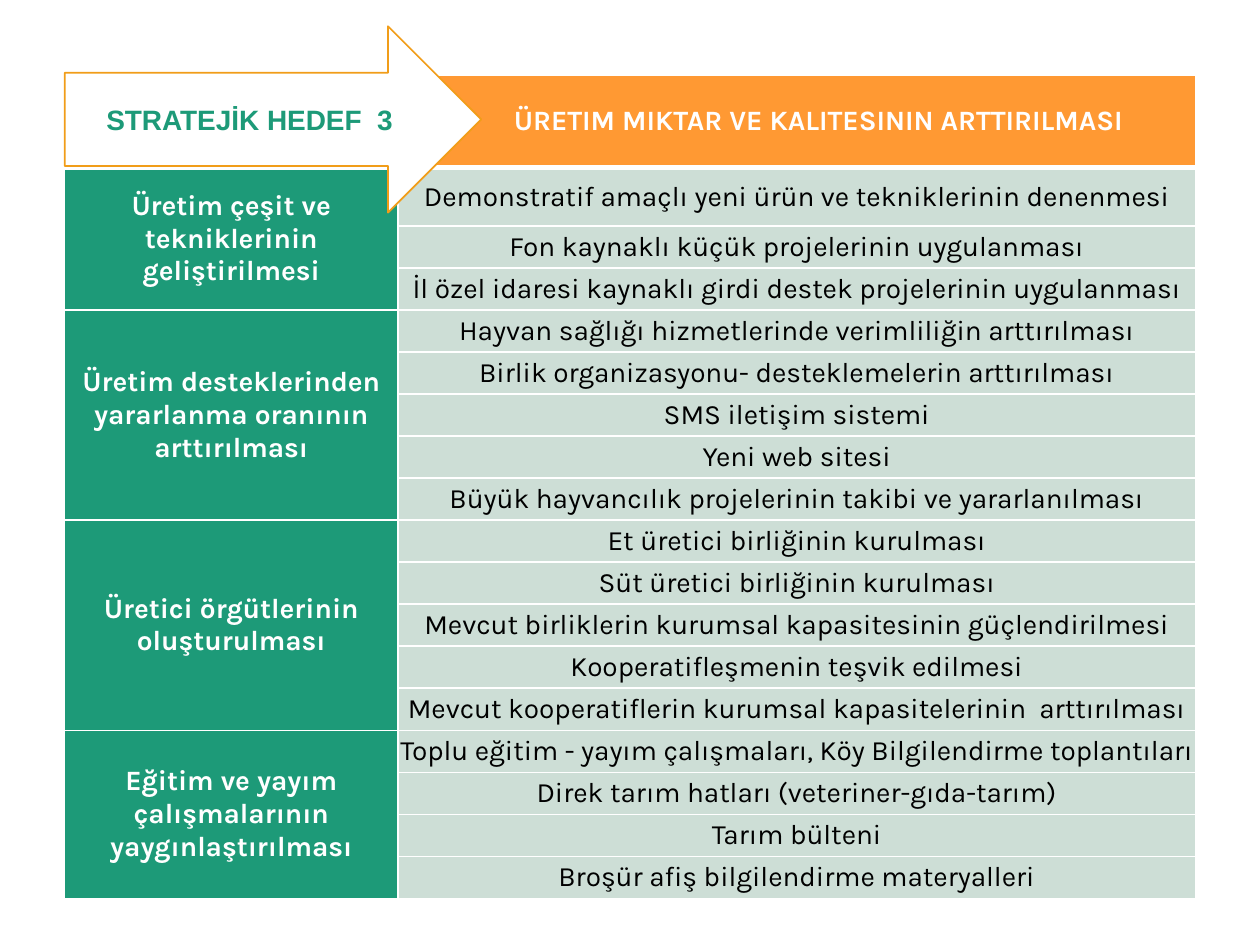
"""Build the slide that lists the activities of strategic goal 3."""

from typing import NamedTuple

from lxml.etree import SubElement
from pptx import Presentation
from pptx.dml.color import RGBColor
from pptx.enum.shapes import MSO_SHAPE
from pptx.enum.text import MSO_ANCHOR, PP_ALIGN
from pptx.oxml.ns import qn
from pptx.slide import Slide
from pptx.table import Table, _Cell
from pptx.text.text import TextFrame
from pptx.util import Pt

GREEN = RGBColor(0x1D, 0x9A, 0x78)
PALE_GREEN = RGBColor(0xCD, 0xDE, 0xD6)
ORANGE = RGBColor(0xFF, 0x99, 0x33)
AMBER = RGBColor(0xF1, 0x9D, 0x19)
WHITE = RGBColor(0xFF, 0xFF, 0xFF)
BLACK = RGBColor(0x00, 0x00, 0x00)

LEFT, TOP = Pt(37), Pt(43.2)
COLUMN_WIDTHS = (Pt(190.4), Pt(455.8))
HEADER_HEIGHT, FIRST_HEIGHT, ROW_HEIGHT = Pt(52.6), Pt(33.4), Pt(24.03)
HEADER_INDENT = Pt(25)
THIN, THICK = Pt(1), Pt(3)


class Objective(NamedTuple):
    title: str
    activities: tuple[str, ...]


HEADING = "ÜRETIM MIKTAR VE KALITESININ ARTTIRILMASI"
GOAL = "STRATEJİK HEDEF  3"
OBJECTIVES = (
    Objective("Üretim çeşit ve\ntekniklerinin\ngeliştirilmesi", (
        "Demonstratif amaçlı yeni ürün ve tekniklerinin denenmesi",
        "Fon kaynaklı küçük projelerinin uygulanması",
        "İl özel idaresi kaynaklı girdi destek projelerinin uygulanması",
    )),
    Objective("Üretim desteklerinden yararlanma oranının arttırılması", (
        "Hayvan sağlığı hizmetlerinde verimliliğin arttırılması",
        "Birlik organizasyonu- desteklemelerin arttırılması",
        "SMS iletişim sistemi",
        "Yeni web sitesi",
        "Büyük hayvancılık projelerinin takibi ve yararlanılması",
    )),
    Objective("Üretici örgütlerinin oluşturulması", (
        "Et üretici birliğinin kurulması",
        "Süt üretici birliğinin kurulması",
        "Mevcut birliklerin kurumsal kapasitesinin güçlendirilmesi",
        "Kooperatifleşmenin teşvik edilmesi",
        "Mevcut kooperatiflerin kurumsal kapasitelerinin  arttırılması",
    )),
    Objective("Eğitim ve yayım çalışmalarının yaygınlaştırılması", (
        "Toplu eğitim - yayım çalışmaları, Köy Bilgilendirme toplantıları",
        "Direk tarım hatları (veteriner-gıda-tarım)",
        "Tarım bülteni",
        "Broşür afiş bilgilendirme materyalleri",
    )),
)


def write_text(frame: TextFrame, text: str, color: RGBColor, bold: bool, font: str = "Karla") -> None:
    font_format = {"name": font, "size": Pt(16), "bold": bold}
    frame.text = text
    for paragraph in frame.paragraphs:
        paragraph.alignment = PP_ALIGN.CENTER
        for run in paragraph.runs:
            for name, value in font_format.items():
                setattr(run.font, name, value)
            run.font.color.rgb = color


def draw_borders(cell: _Cell, bottom: int) -> None:
    properties = cell._tc.get_or_add_tcPr()
    for side, width in {"lnL": THIN, "lnR": THIN, "lnT": THIN, "lnB": bottom}.items():
        line = SubElement(properties, qn(f"a:{side}"), w=str(int(width)))
        SubElement(SubElement(line, qn("a:solidFill")), qn("a:srgbClr"), val=str(WHITE))


def format_cell(cell: _Cell, fill: RGBColor, bottom: int = THIN) -> None:
    cell_format = {
        "margin_left": 0, "margin_right": 0, "margin_top": 0, "margin_bottom": 0,
        "vertical_anchor": MSO_ANCHOR.MIDDLE,
    }
    for name, value in cell_format.items():
        setattr(cell, name, value)
    draw_borders(cell, bottom)
    cell.fill.solid()
    cell.fill.fore_color.rgb = fill


def fill_objective(table: Table, first: int, objective: Objective) -> int:
    after = first + len(objective.activities)
    for row, activity in enumerate(objective.activities, first):
        format_cell(table.cell(row, 0), GREEN)
        format_cell(table.cell(row, 1), PALE_GREEN)
        write_text(table.cell(row, 1).text_frame, activity, BLACK, False)
    table.cell(first, 0).merge(table.cell(after - 1, 0))
    write_text(table.cell(first, 0).text_frame, objective.title, WHITE, True)
    return after


def draw_table(slide: Slide) -> None:
    count = sum(len(objective.activities) for objective in OBJECTIVES)
    heights = [HEADER_HEIGHT, FIRST_HEIGHT] + [ROW_HEIGHT] * (count - 1)
    table = slide.shapes.add_table(
        count + 1, 2, LEFT, TOP, sum(COLUMN_WIDTHS), sum(heights)).table
    for name in ("first_row", "horz_banding"):
        setattr(table, name, False)
    for column, width in zip(table.columns, COLUMN_WIDTHS):
        column.width = width
    for row, height in zip(table.rows, heights):
        row.height = height

    format_cell(table.cell(0, 0), GREEN, THICK)
    header = table.cell(0, 1)
    format_cell(header, ORANGE, THICK)
    header.margin_left = HEADER_INDENT
    write_text(header.text_frame, HEADING, WHITE, True)

    row = 1
    for objective in OBJECTIVES:
        row = fill_objective(table, row, objective)


def draw_goal_arrow(slide: Slide) -> None:
    arrow = slide.shapes.add_shape(MSO_SHAPE.RIGHT_ARROW, LEFT, Pt(15), Pt(238), Pt(106.5))
    arrow.shadow.inherit = False
    arrow.fill.solid()
    arrow.fill.fore_color.rgb = WHITE
    arrow.line.color.rgb = AMBER
    arrow.line.width = THIN
    arrow.text_frame.vertical_anchor = MSO_ANCHOR.MIDDLE
    write_text(arrow.text_frame, GOAL, GREEN, True, "Arial")


def main() -> None:
    presentation = Presentation()
    presentation.slide_width, presentation.slide_height = Pt(720), Pt(540)
    slide = presentation.slides.add_slide(presentation.slide_layouts[6])
    draw_table(slide)
    draw_goal_arrow(slide)
    presentation.save("out.pptx")


if __name__ == "__main__":
    main()
